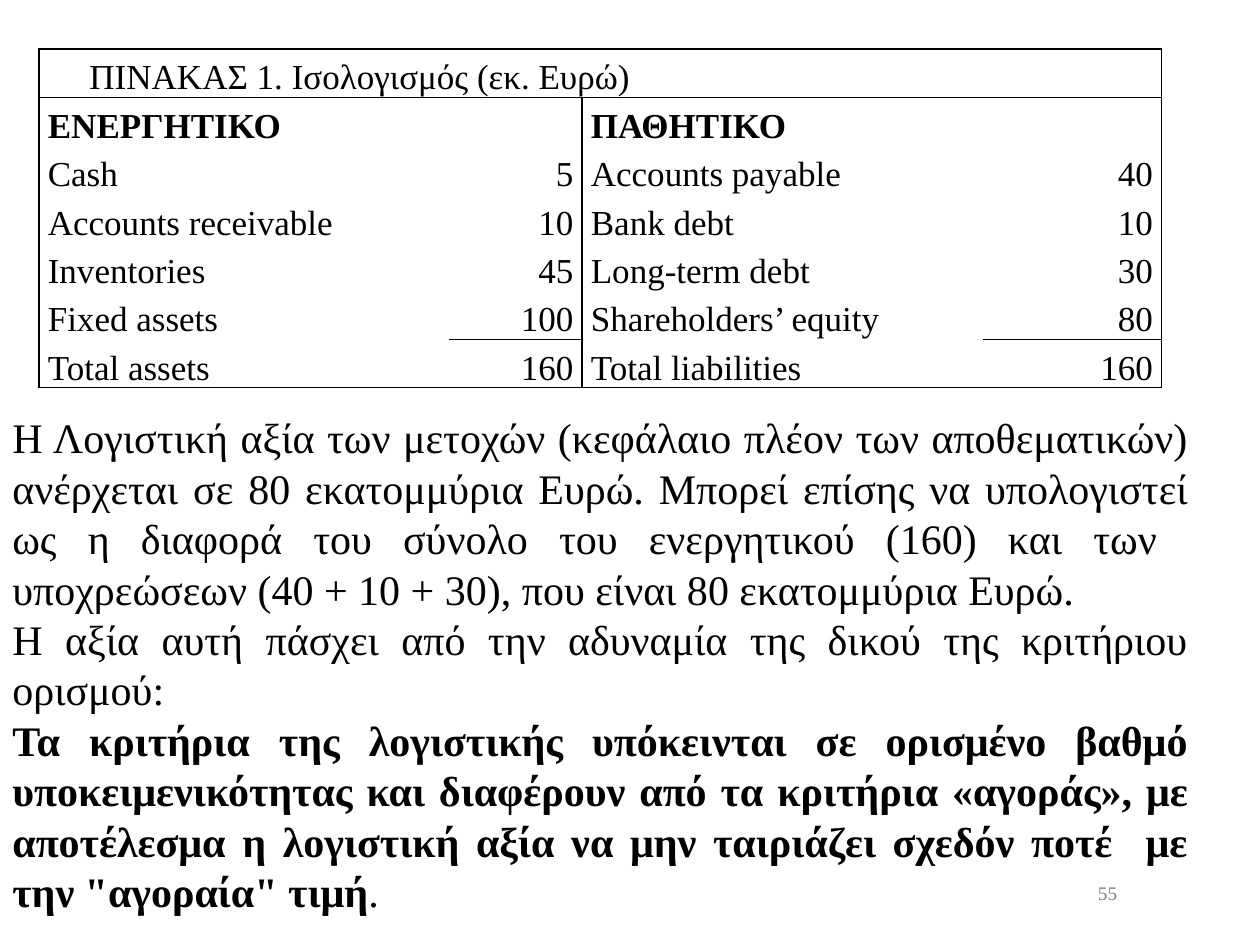
"""Build the balance sheet slide with its table and commentary."""
from lxml import etree
from pptx import Presentation
from pptx.dml.color import RGBColor
from pptx.enum.text import MSO_ANCHOR, PP_ALIGN
from pptx.oxml.ns import qn
from pptx.util import Inches, Pt

MIDDLE, BOTTOM = MSO_ANCHOR.MIDDLE, MSO_ANCHOR.BOTTOM
LEFT, CENTER = PP_ALIGN.LEFT, PP_ALIGN.CENTER
RIGHT, JUSTIFY = PP_ALIGN.RIGHT, PP_ALIGN.JUSTIFY

THEME = {
    "font": "Times New Roman", "ink": "000000", "gray": "808080",
    "table": 20, "body": 24, "page": 11, "line": 1,
}
ROWS = [
    ("ΠΙΝΑΚΑΣ 1. Ισολογισμός (εκ. Ευρώ)", "", "", ""),
    ("ΕΝΕΡΓΗΤΙΚΟ", "", "ΠΑΘΗΤΙΚΟ", ""),
    ("Cash", "5", "Accounts payable", "40"),
    ("Accounts receivable", "10", "Bank debt", "10"),
    ("Inventories", "45", "Long-term debt", "30"),
    ("Fixed assets", "100", "Shareholders’ equity", "80"),
    ("Total assets", "160", "Total liabilities", "160"),
]
SPANS = {(0, 0): 4, (1, 0): 2}
WIDTHS = (3.25, 1.06, 3.18, 1.42)
HEIGHT = 0.33
LAST = len(ROWS) - 1
BODY = [
    [("Η Λογιστική αξία των μετοχών (κεφάλαιο πλέον των αποθεματικών) "
      "ανέρχεται σε 80 εκατομμύρια Ευρώ. Μπορεί επίσης να υπολογιστεί ως η "
      "διαφορά του σύνολο του ενεργητικού (160) και των  υποχρεώσεων "
      "(40 + 10 + 30), που είναι 80 εκατομμύρια Ευρώ.", False)],
    [("Η αξία αυτή πάσχει από την αδυναμία της δικού της κριτήριου ορισμού:",
      False)],
    [("Τα κριτήρια της λογιστικής υπόκεινται σε ορισμένο βαθμό "
      "υποκειμενικότητας και διαφέρουν από τα κριτήρια «αγοράς», με "
      "αποτέλεσμα η λογιστική αξία να μην ταιριάζει σχεδόν ποτέ  με την "
      "\"αγοραία\" τιμή", True), (".", False)],
]
PAGE = [[("55", False)]]


def style(para, size, color, align):
    para.alignment = align
    para.font.name = THEME["font"]
    para.font.size = Pt(THEME[size])
    para.font.color.rgb = RGBColor.from_string(THEME[color])


def add_text(slide, box, paras, size, color, align):
    frame = slide.shapes.add_textbox(*map(Inches, box)).text_frame
    frame.word_wrap = True
    frame.vertical_anchor = MIDDLE
    for i, runs in enumerate(paras):
        para = frame.add_paragraph() if i else frame.paragraphs[0]
        for text, bold in runs:
            run = para.add_run()
            run.text = text
            run.font.bold = bold
        style(para, size, color, align)
    return frame


def find_edges(row, col):
    end = col + SPANS.get((row, col), 1) - 1
    inner = row > 0
    total = col % 2 == 1
    return {
        "lnL": col == 0 or (inner and col == 2),
        "lnR": end == 3 or (inner and end == 1),
        "lnT": row < 2 or (row == LAST and total),
        "lnB": row in (0, LAST) or (row == LAST - 1 and total),
    }


def set_edges(cell, edges):
    props = cell._tc.get_or_add_tcPr()
    for i, (tag, shown) in enumerate(edges.items()):
        line = etree.Element(qn(f"a:{tag}"), w=str(Pt(THEME["line"])))
        if shown:
            fill = etree.SubElement(line, qn("a:solidFill"))
            etree.SubElement(fill, qn("a:srgbClr"), val=THEME["ink"])
        else:
            etree.SubElement(line, qn("a:noFill"))
        props.insert(i, line)


def fill_cell(cell, text, row, col):
    cell.fill.background()
    cell.vertical_anchor = BOTTOM
    cell.margin_left = cell.margin_right = Inches(0.07)
    cell.margin_top = cell.margin_bottom = 0
    set_edges(cell, find_edges(row, col))
    para = cell.text_frame.paragraphs[0]
    para.text = text
    para.line_spacing = 1.15
    if row == 0:
        para._p.get_or_add_pPr().set("indent", str(Inches(0.33)))
    style(para, "table", "ink", RIGHT if col % 2 else LEFT)
    para.font.bold = row == 1


def add_sheet(slide):
    box = (0.31, 0.39, sum(WIDTHS), HEIGHT * len(ROWS))
    table = slide.shapes.add_table(
        len(ROWS), len(WIDTHS), *map(Inches, box)).table
    table.first_row = table.horz_banding = False
    for column, width in zip(table.columns, WIDTHS):
        column.width = Inches(width)
    for (row, col), span in SPANS.items():
        table.cell(row, col).merge(table.cell(row, col + span - 1))
    for r, texts in enumerate(ROWS):
        table.rows[r].height = Inches(HEIGHT)
        for c, text in enumerate(texts):
            fill_cell(table.cell(r, c), text, r, c)


def main():
    deck = Presentation()
    deck.slide_width, deck.slide_height = Inches(10), Inches(7.5)
    slide = deck.slides.add_slide(deck.slide_layouts[6])
    page = add_text(slide, (8.5, 7, 0.58, 0.17), PAGE, "page", "gray", CENTER)
    page.margin_left = page.margin_right = 0
    page.margin_top = page.margin_bottom = 0
    add_sheet(slide)
    add_text(slide, (0, 3.2, 9.53, 4.14), BODY, "body", "ink", JUSTIFY)
    deck.save("out.pptx")


if __name__ == "__main__":
    main()
